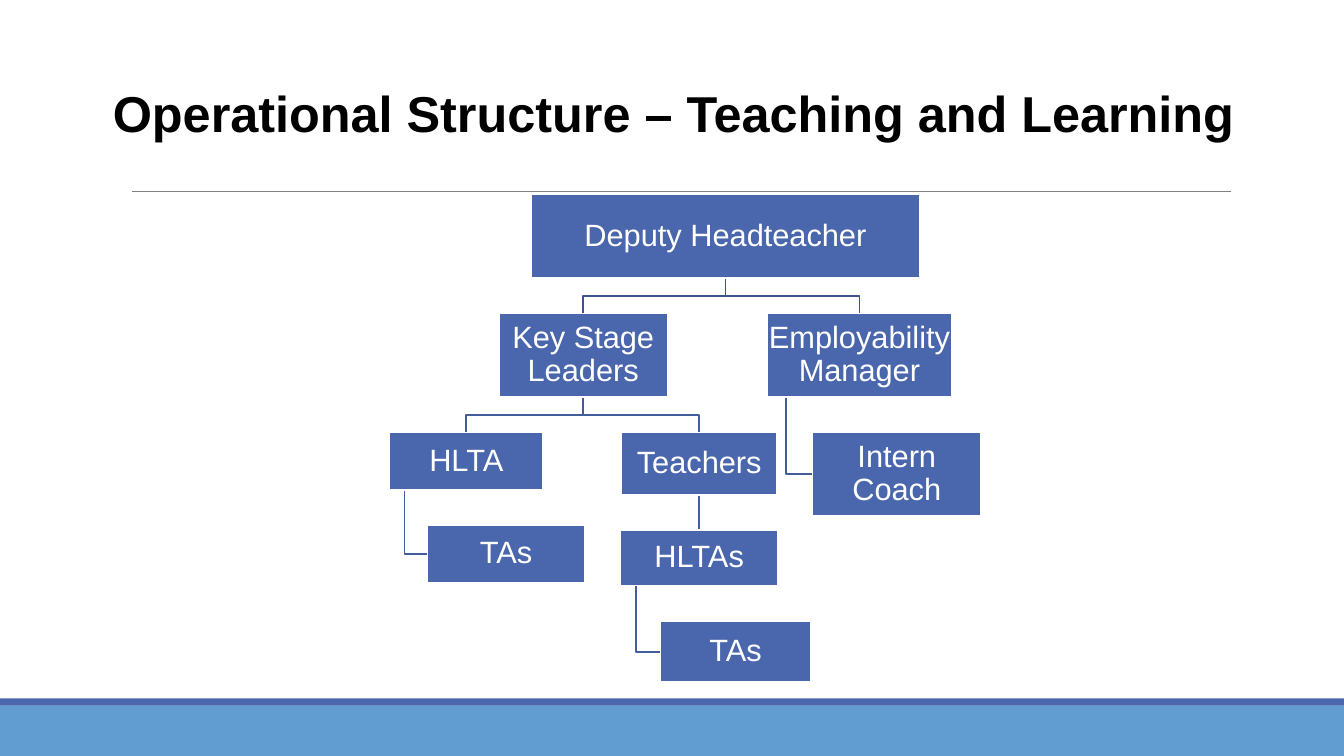
from lxml.etree import SubElement
from pptx import Presentation
from pptx.dml.color import RGBColor
from pptx.enum.shapes import MSO_CONNECTOR as Connector, MSO_SHAPE as Preset
from pptx.enum.text import MSO_ANCHOR as Anchor, MSO_AUTO_SIZE as AutoSize, PP_ALIGN as Align
from pptx.oxml.ns import qn
from pptx.util import Inches, Pt

WIDTH, HEIGHT = 13.33, 7.5
TITLE = "Operational Structure – Teaching and Learning"
FONT = "Arial"
BLUE, SKY, WHITE, BLACK, GREY = "4A66AC", "629DD1", "FFFFFF", "000000", "808080"
DARK_LINK, LINK = "3B528A", "435D9C"

# Post: (label, parent, kind of link, left, width, height)
POSTS = {
    "deputy": ("Deputy Headteacher", None, None, 5.27, 3.85, 0.83),
    "leaders": ("Key Stage Leaders", "deputy", "fork", 4.95, 1.67, 0.83),
    "hlta": ("HLTA", "leaders", "fork", 3.86, 1.53, 0.57),
    "hlta_tas": ("TAs", "hlta", "hang", 4.24, 1.56, 0.57),
    "teachers": ("Teachers", "leaders", "fork", 6.16, 1.55, 0.62),
    "hltas": ("HLTAs", "teachers", "straight", 6.15, 1.57, 0.55),
    "hltas_tas": ("TAs", "hltas", "hang", 6.55, 1.49, 0.61),
    "manager": ("Employability Manager", "deputy", "fork", 7.61, 1.83, 0.83),
    "coach": ("Intern Coach", "manager", "hang", 8.06, 1.67, 0.83),
}
CHART_TOP = 1.93
LEVEL_GAP = 0.35   # from a parent's bottom to its child's top
HANG_SHARE = 0.1   # where a hanging link leaves its parent's width


def color(value):
    return RGBColor.from_string(value)


def add_rectangle(left, top, width, height, fill):
    box = page.shapes.add_shape(Preset.RECTANGLE, *map(Inches, (left, top, width, height)))
    box.shadow.inherit = False
    box.fill.solid()
    box.fill.fore_color.rgb = color(fill)
    box.line.fill.background()
    return box


def add_line(start, end, stroke, weight):
    line = page.shapes.add_connector(Connector.STRAIGHT, *start, *end)
    SubElement(line.element.spPr, qn("a:effectLst"))
    line.line.color.rgb = color(stroke)
    line.line.width = Pt(weight)
    return line


def add_elbow(points, stroke):
    builder = page.shapes.build_freeform(*points[0], scale=1.0)
    builder.add_line_segments(points[1:], close=False)
    elbow = builder.convert_to_shape()
    elbow.shadow.inherit = False
    elbow.fill.background()
    elbow.line.color.rgb = color(stroke)
    elbow.line.width = Pt(1.25)
    return elbow


def format_text(box, text, size, fill, inset=None):
    frame = box.text_frame
    frame.text = text
    frame.word_wrap = True
    frame.vertical_anchor = Anchor.MIDDLE
    if inset is not None:
        frame.margin_left = frame.margin_right = Inches(inset)
        frame.margin_top = frame.margin_bottom = Inches(inset)
    para = frame.paragraphs[0]
    para.alignment = Align.CENTER
    para.line_spacing = 0.9
    para.font.name = FONT
    para.font.size = Pt(size)
    para.font.color.rgb = color(fill)
    return para


def add_link(parent, child, kind, stroke):
    middle = parent.left + parent.width // 2
    child_middle = child.left + child.width // 2
    bottom = parent.top + parent.height
    if kind == "straight":
        link = add_line((middle, bottom), (child_middle, child.top), stroke, 1.25)
        link.begin_connect(parent, 2)
        link.end_connect(child, 0)
        return link
    if kind == "hang":
        left = parent.left + int(parent.width * HANG_SHARE)
        level = child.top + child.height // 2
        return add_elbow([(left, bottom), (left, level), (child.left, level)], stroke)
    level = (bottom + child.top) // 2
    return add_elbow([(middle, bottom), (middle, level),
                      (child_middle, level), (child_middle, child.top)], stroke)


deck = Presentation()
deck.slide_width, deck.slide_height = Inches(WIDTH), Inches(HEIGHT)
page = deck.slides.add_slide(deck.slide_layouts[5])

# Footer bands and rule under the title
add_rectangle(0, 7, WIDTH, 0.5, SKY)
add_rectangle(0, 6.93, WIDTH, 0.07, BLUE)
add_line((Inches(1.31), Inches(1.9)), (Inches(12.21), Inches(1.9)), GREY, 0.5)

# Title
title = page.shapes.title
title.left, title.top, title.width, title.height = map(Inches, (0.76, 0.76, 11.85, 0.71))
heading = format_text(title, TITLE, 36, BLACK)
heading.line_spacing = 1.0
heading.font.bold = True
title.text_frame.auto_size = AutoSize.SHAPE_TO_FIT_TEXT

# Posts, each one gap below its parent
boxes, bottoms = {}, {None: CHART_TOP - LEVEL_GAP}
for name, (label, parent, kind, left, width, height) in POSTS.items():
    top = bottoms[parent] + LEVEL_GAP
    bottoms[name] = top + height
    box = boxes[name] = add_rectangle(left, top, width, height, BLUE)
    box.line.color.rgb = color(WHITE)
    box.line.width = Pt(1.25)
    format_text(box, label, 22, WHITE, inset=0.01)

# Links, placed behind the posts
for name, (label, parent, kind, *_) in POSTS.items():
    if parent:
        stroke = DARK_LINK if parent == "deputy" else LINK
        link = add_link(boxes[parent], boxes[name], kind, stroke)
        boxes["deputy"].element.addprevious(link.element)

deck.save("out.pptx")
